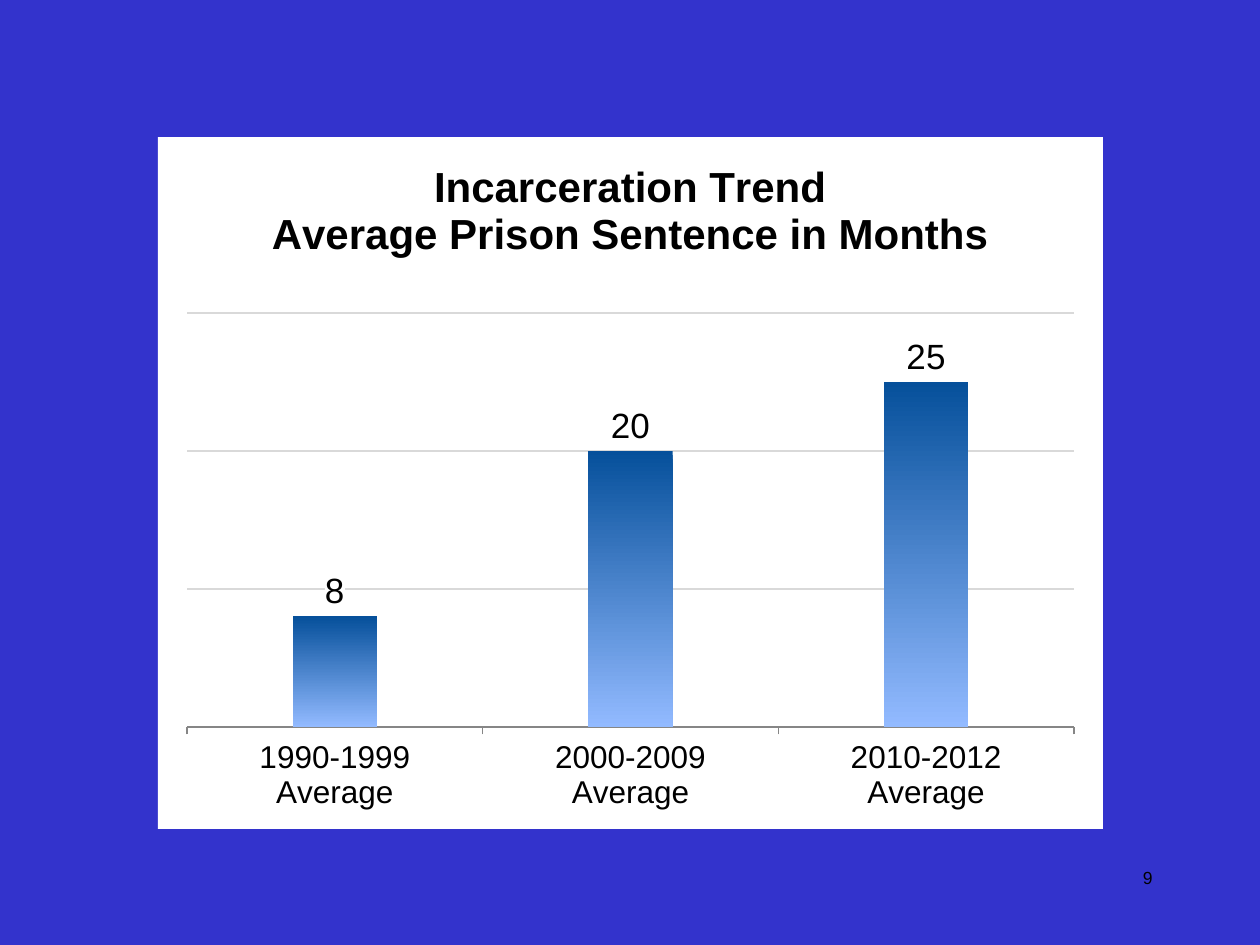
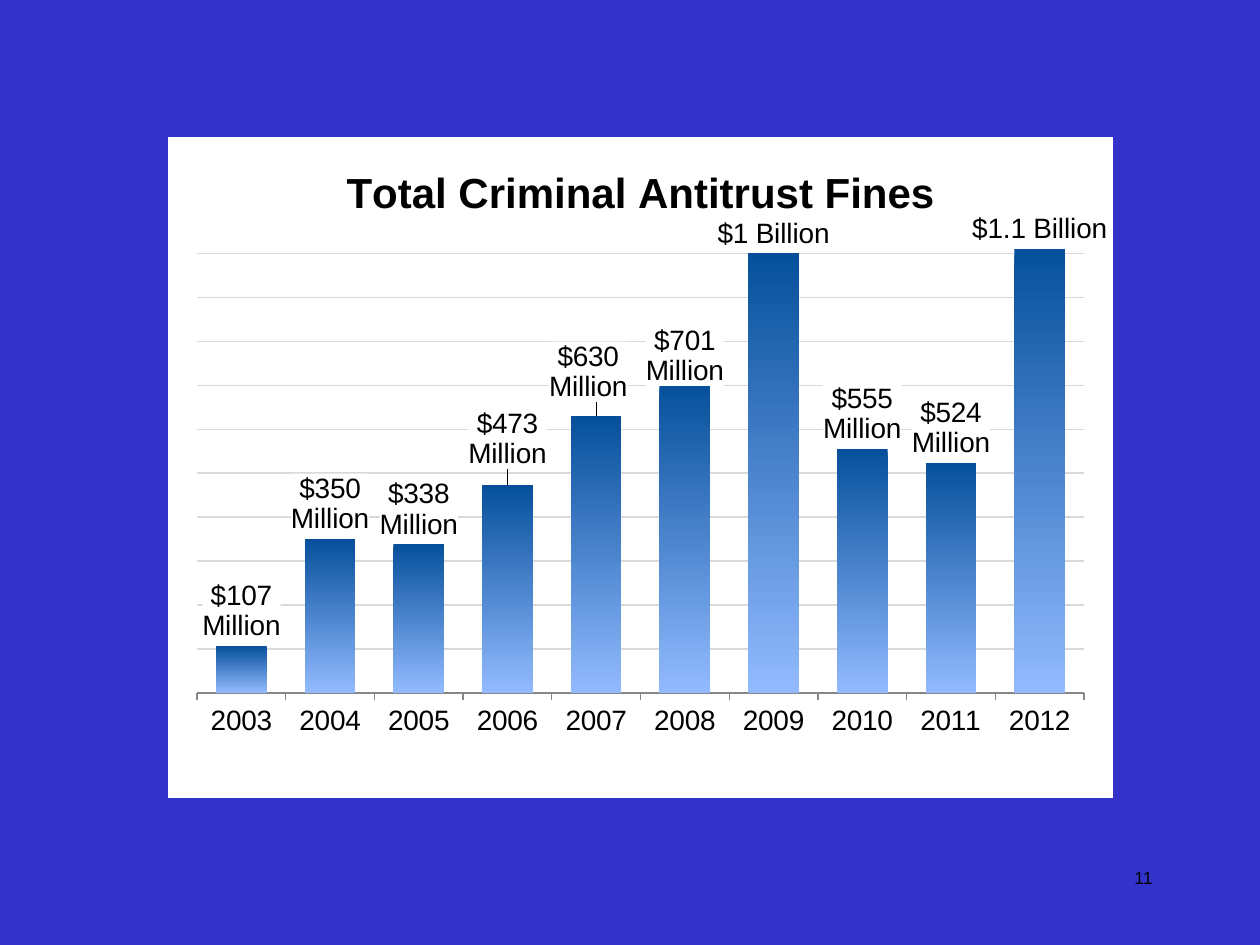
"""Build two slides of column charts on antitrust enforcement."""
import lxml.etree
import pptx
import pptx.chart.data
import pptx.dml.color
import pptx.enum.chart
import pptx.enum.text
import pptx.oxml
import pptx.oxml.ns
import pptx.util

PIXEL = 914400 / 126
BLUE = pptx.dml.color.RGBColor(0x33, 0x33, 0xCC)
BLACK = pptx.dml.color.RGBColor(0, 0, 0)
WHITE = pptx.dml.color.RGBColor(0xFF, 0xFF, 0xFF)
GRID_GRAY = pptx.dml.color.RGBColor(0xD9, 0xD9, 0xD9)
AXIS_GRAY = pptx.dml.color.RGBColor(0x86, 0x86, 0x86)
BAR_TOP = pptx.dml.color.RGBColor(0x06, 0x50, 0x9B)
BAR_BOTTOM = pptx.dml.color.RGBColor(0x92, 0xBA, 0xFF)
FONT = "Arial"
NO_LEADER_LINES = (
    f'<c:extLst {pptx.oxml.ns.nsdecls("c")}><c:ext uri="{{CE6537A1-D6FC-4f65-9D91-7224C49458BB}}" '
    'xmlns:c15="http://schemas.microsoft.com/office/drawing/2012/chart">'
    '<c15:showLeaderLines val="0"/></c:ext></c:extLst>')


def px(*lengths):
    return [pptx.util.Emu(round(length * PIXEL)) for length in lengths]


def white_fill():
    return pptx.oxml.parse_xml(
        f'<c:spPr {pptx.oxml.ns.nsdecls("c", "a")}><a:solidFill><a:srgbClr val="{WHITE}"/>'
        "</a:solidFill><a:ln><a:noFill/></a:ln></c:spPr>")


def manual_layout(**settings):
    layout = pptx.oxml.parse_xml(
        f'<c:layout {pptx.oxml.ns.nsdecls("c")}><c:manualLayout/></c:layout>')
    for name, value in settings.items():
        lxml.etree.SubElement(layout[0], pptx.oxml.ns.qn(f"c:{name}"), val=str(value))
    return layout


def set_font(font, size, bold=False):
    font.name = FONT
    font.size = pptx.util.Pt(size)
    font.bold = bold
    font.color.rgb = BLACK


class ChartDeck:
    def __init__(self):
        self.deck = pptx.Presentation()
        self.deck.slide_width, self.deck.slide_height = px(1260, 945)
        fill = self.deck.slide_master.background.fill
        fill.solid()
        fill.fore_color.rgb = BLUE
        self.page = None
        self.chart = None
        self.chart_size = None

    def add_page(self, number):
        self.page = self.deck.slides.add_slide(self.deck.slide_layouts[6])
        box = self.page.shapes.add_textbox(*px(903, 861, 262, 63))
        box.text_frame.word_wrap = True
        para = box.text_frame.paragraphs[0]
        para.text = str(number)
        para.alignment = pptx.enum.text.PP_ALIGN.RIGHT
        set_font(para.font, 10)

    def share(self, across, down):
        width, height = self.chart_size
        return {"x": across / width, "y": down / height}

    def add_columns(self, place, values, gap, plot):
        data = pptx.chart.data.CategoryChartData()
        data.categories = list(values)
        data.add_series("Series 1", values.values())
        chart = self.page.shapes.add_chart(
            pptx.enum.chart.XL_CHART_TYPE.COLUMN_CLUSTERED, *px(*place), data).chart
        self.chart, self.chart_size = chart, place[2:]
        chart.has_legend = False
        set_font(chart.font, 10)
        chart.element.xpath("c:chart")[0].addnext(white_fill())
        area = chart.element.xpath("c:chart/c:plotArea")[0]
        for layout in area.xpath("c:layout"):
            area.remove(layout)
        extent = self.share(*plot[2:])
        area.insert(0, manual_layout(
            layoutTarget="inner", xMode="edge", yMode="edge",
            **self.share(*plot[:2]), w=extent["x"], h=extent["y"]))
        columns = chart.plots[0]
        columns.gap_width = gap
        columns.vary_by_categories = False
        fill = columns.series[0].format.fill
        fill.gradient()
        fill.gradient_angle = 270
        for stop, color in zip(fill.gradient_stops, (BAR_TOP, BAR_BOTTOM)):
            stop.color.rgb = color

    def add_title(self, text, left, top=21):
        frame = self.chart.chart_title.text_frame
        frame.text = text
        for para in frame.paragraphs:
            set_font(para.font, 24, bold=True)
        title = self.chart.element.xpath("c:chart/c:title")[0]
        for layout in title.xpath("c:layout"):
            title.remove(layout)
        title.xpath("c:tx")[0].addnext(
            manual_layout(xMode="edge", yMode="edge", **self.share(left, top)))

    def style_axes(self, size, maximum, step, number_format):
        marks = pptx.enum.chart.XL_TICK_MARK
        periods = self.chart.category_axis
        periods.major_tick_mark = marks.OUTSIDE
        periods.format.line.color.rgb = AXIS_GRAY
        set_font(periods.tick_labels.font, size)
        scale = self.chart.value_axis
        scale.minimum_scale, scale.maximum_scale, scale.major_unit = 0, maximum, step
        scale.major_tick_mark = marks.NONE
        scale.tick_labels.number_format = number_format
        scale.tick_labels.number_format_is_linked = False
        scale.tick_label_position = pptx.enum.chart.XL_TICK_LABEL_POSITION.NONE
        scale.format.line.fill.background()
        grid = scale.major_gridlines.format.line
        grid.color.rgb = GRID_GRAY
        grid.width = pptx.util.Pt(0.75)

    def add_value_labels(self, size, number_format):
        labels = self.chart.plots[0].series[0].data_labels
        labels.show_value = True
        labels.number_format = number_format
        labels.number_format_is_linked = False
        labels.position = pptx.enum.chart.XL_LABEL_POSITION.OUTSIDE_END
        set_font(labels.font, size)
        group = self.chart.element.xpath(".//c:ser/c:dLbls")[0]
        group.xpath("c:txPr")[0].addprevious(white_fill())
        group.append(pptx.oxml.parse_xml(NO_LEADER_LINES))

    def add_text_labels(self, texts, size, nudges):
        points = self.chart.plots[0].series[0].points
        for index, text in enumerate(texts):
            label = points[index].data_label
            label.text_frame.text = text
            for para in label.text_frame.paragraphs:
                set_font(para.font, size)
            label.position = pptx.enum.chart.XL_LABEL_POSITION.OUTSIDE_END
            node = self.chart.element.xpath(f".//c:dLbl[c:idx/@val='{index}']")[0]
            node.xpath("c:tx")[0].addnext(white_fill())
            if index in nudges:
                node.xpath("c:idx")[0].addnext(manual_layout(**self.share(*nudges[index])))


def main():
    show = ChartDeck()

    show.add_page(9)
    sentences = {"1990-1999\nAverage": 8, "2000-2009\nAverage": 20, "2010-2012\nAverage": 25}
    show.add_columns((158, 137, 945, 692), sentences, 250, (29, 176, 887, 414))
    show.add_title("Incarceration Trend\nAverage Prison Sentence in Months", 110)
    show.style_axes(18, 30, 10, "#,##0")
    show.add_value_labels(20, "#,##0")

    show.add_page(11)
    amounts = (107, 350, 338, 473, 630, 701, 1000, 555, 524, 1010)
    fines = {str(2003 + index): amount for index, amount in enumerate(amounts)}
    labels = [f"${amount}\nMillion" for amount in amounts]
    labels[6], labels[9] = "$1 Billion", "$1.1 Billion"
    show.add_columns((168, 137, 945, 661), fines, 75, (29, 112, 887, 444))
    show.add_title("Total Criminal Antitrust Fines", 171)
    show.style_axes(16, 1010, 100, "0")
    show.add_value_labels(16, "General")
    show.add_text_labels(labels, 16, {3: (0, -11), 4: (-8, -9), 5: (0, 6)})

    show.deck.save("out.pptx")


if __name__ == "__main__":
    main()
